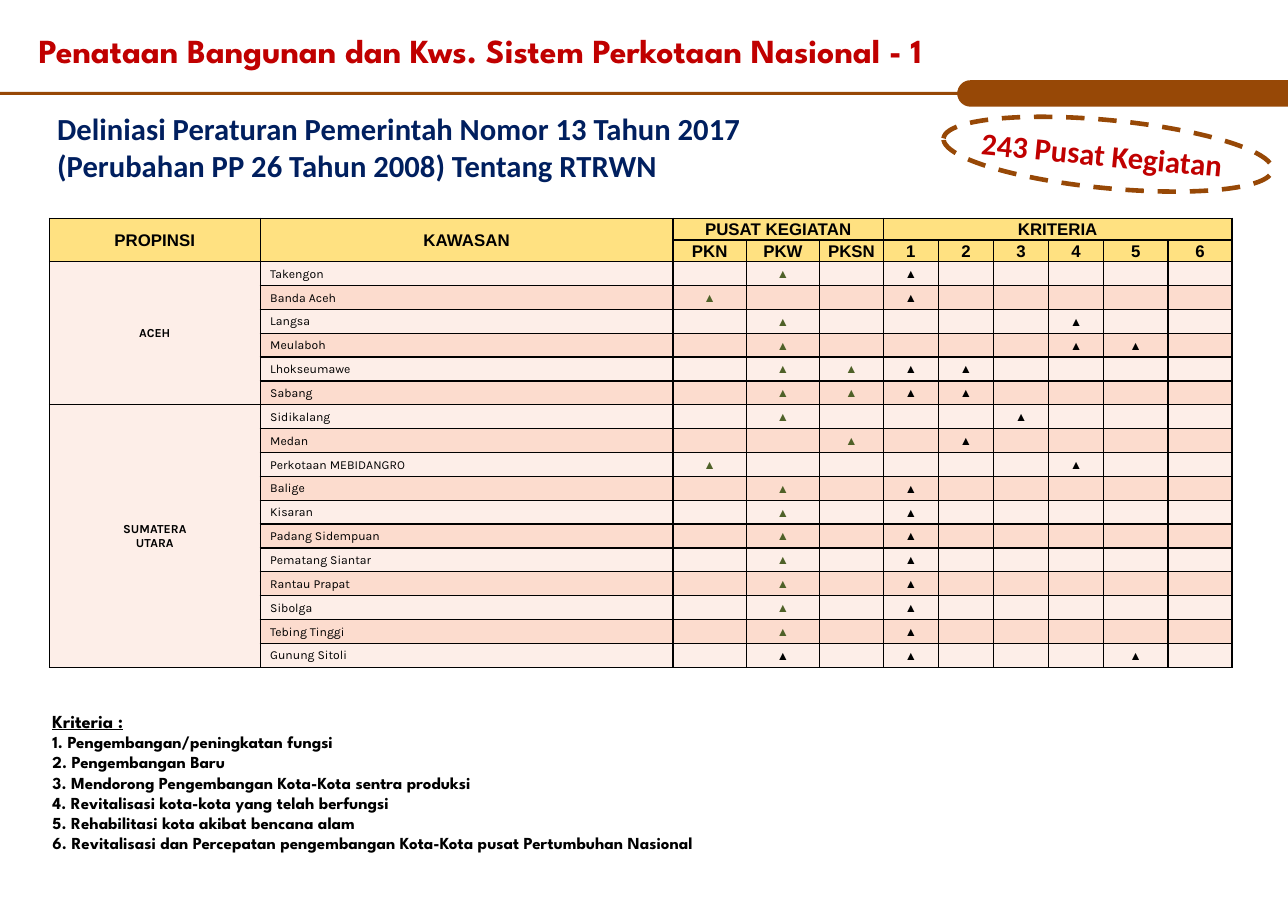
from math import cos, pi, sin

from lxml.etree import SubElement
from pptx import Presentation
from pptx.dml.color import RGBColor
from pptx.enum.dml import MSO_LINE
from pptx.enum.shapes import MSO_SHAPE
from pptx.enum.text import MSO_ANCHOR, MSO_AUTO_SIZE, PP_ALIGN
from pptx.oxml import parse_xml
from pptx.oxml.ns import nsdecls, qn
from pptx.util import Cm, Pt

COLORS = {
    "red": "C00000", "brown": "974806", "navy": "001F5F", "black": "000000",
    "green": "4F6128", "header": "FFE181", "light": "FDEEE8", "dark": "FCDCCE",
}
TITLE = {"name": "League Spartan", "size": Pt(22), "bold": True, "color": "red"}
SUBTITLE = {"name": "Calibri", "size": Pt(20), "bold": True, "color": "navy"}
BADGE = {**SUBTITLE, "color": "red"}
LIST_ITEM = {"name": "League Spartan", "size": Pt(11), "bold": True, "color": "black"}
LIST_HEAD = {**LIST_ITEM, "size": Pt(12), "underline": True}
HEADER = {"name": "Arial", "size": Pt(11), "bold": True, "color": "black"}
AREA = {"name": "Karla", "size": Pt(8), "bold": False, "color": "black"}
PROVINCE = {**AREA, "bold": True}
MARK = {**HEADER, "size": Pt(8)}
CENTER_MARK = {**MARK, "color": "green"}

CENTERS = ["PKN", "PKW", "PKSN"]
CRITERIA = ["1", "2", "3", "4", "5", "6"]
COLUMNS = ["PROPINSI", "KAWASAN"] + CENTERS + CRITERIA
WIDTHS = [4.86, 9.52, 1.69, 1.69, 1.47, 1.27, 1.27, 1.27, 1.27, 1.48, 1.48]
HEADER_HEIGHT, ROW_HEIGHT = 0.5, 0.55
PROVINCES = [
    (["ACEH"], [
        ("Takengon", "PKW 1"),
        ("Banda Aceh", "PKN 1"),
        ("Langsa", "PKW 4"),
        ("Meulaboh", "PKW 4 5"),
        ("Lhokseumawe", "PKW PKSN 1 2"),
        ("Sabang", "PKW PKSN 1 2"),
    ]),
    (["SUMATERA", "UTARA"], [
        ("Sidikalang", "PKW 3"),
        ("Medan", "PKSN 2"),
        ("Perkotaan MEBIDANGRO", "PKN 4"),
        ("Balige", "PKW 1"),
        ("Kisaran", "PKW 1"),
        ("Padang Sidempuan", "PKW 1"),
        ("Pematang Siantar", "PKW 1"),
        ("Rantau Prapat", "PKW 1"),
        ("Sibolga", "PKW 1"),
        ("Tebing Tinggi", "PKW 1"),
        ("Gunung Sitoli", "PKW 1 5"),
    ]),
]
BLACK_MARK_AREAS = {"Gunung Sitoli"}
CRITERIA_LIST = [
    "1. Pengembangan/peningkatan fungsi",
    "2. Pengembangan Baru",
    "3. Mendorong Pengembangan Kota-Kota sentra produksi",
    "4. Revitalisasi kota-kota yang telah berfungsi",
    "5. Rehabilitasi kota akibat bencana alam",
    "6. Revitalisasi dan Percepatan pengembangan Kota-Kota pusat Pertumbuhan Nasional",
]


def rgb(name):
    return RGBColor.from_string(COLORS[name])


def write(tf, lines, fmt, align=PP_ALIGN.LEFT):
    """Fill a text frame with one paragraph per line and return them."""
    for i, line in enumerate(lines):
        p = tf.add_paragraph() if i else tf.paragraphs[0]
        p.alignment = align
        p.space_before = Pt(0)
        r = p.add_run()
        r.text = line
        set_font(r, fmt)
    return tf.paragraphs


def set_font(r, fmt):
    for key, value in fmt.items():
        if key == "color":
            r.font.color.rgb = rgb(value)
        else:
            setattr(r.font, key, value)


def place(sp, left, top, width, height):
    sp.left, sp.top, sp.width, sp.height = map(Cm, (left, top, width, height))


def set_frame(tf, x=0.0, y=0.0):
    """Set the side and top margins and a fixed, wrapped, top-anchored frame."""
    tf.word_wrap = True
    tf.auto_size = MSO_AUTO_SIZE.NONE
    tf.vertical_anchor = MSO_ANCHOR.TOP
    tf.margin_left = tf.margin_right = Cm(x)
    tf.margin_top = tf.margin_bottom = Cm(y)


def add_text(slide, box, lines, fmt, align=PP_ALIGN.LEFT, rotation=0):
    sp = slide.shapes.add_textbox(*map(Cm, box))
    sp.rotation = rotation
    set_frame(sp.text_frame, 0.05, 0.08)
    write(sp.text_frame, lines, fmt, align)


def add_header_band(slide):
    """Draw the thin rule and the bar with a round left end."""
    right, middle, radius, center = 29.7, 2.155, 0.305, 22.38
    start = center - radius
    cap = [(center - radius * sin(a), middle - radius * cos(a))
           for a in (pi * i / 16 for i in range(17))]
    rule = [(0, 2.12), (start, 2.12), (start, 2.19), (0, 2.19)]
    bar = [(right, middle - radius), *cap, (right, middle + radius)]
    fb = slide.shapes.build_freeform(*map(Cm, rule[0]))
    fb.add_line_segments([(Cm(x), Cm(y)) for x, y in rule[1:]])
    fb.move_to(*map(Cm, bar[0]))
    fb.add_line_segments([(Cm(x), Cm(y)) for x, y in bar[1:]])
    sp = fb.convert_to_shape()
    sp.shadow.inherit = False
    sp.fill.solid()
    sp.fill.fore_color.rgb = rgb("brown")
    sp.line.fill.background()


def add_dashed_ellipse(slide, box, rotation):
    sp = slide.shapes.add_shape(MSO_SHAPE.OVAL, *map(Cm, box))
    sp.rotation = rotation
    sp.shadow.inherit = False
    sp.fill.background()
    sp.line.color.rgb = rgb("brown")
    sp.line.width = Pt(3)
    sp.line.dash_style = MSO_LINE.DASH


def format_cell(cell, fill):
    """Give a cell its fill, margins, black borders and small empty line."""
    cell.fill.solid()
    cell.fill.fore_color.rgb = rgb(fill)
    cell.vertical_anchor = MSO_ANCHOR.MIDDLE
    cell.margin_left = cell.margin_right = cell.margin_top = Cm(0.03)
    cell.margin_bottom = 0
    tc_pr = cell._tc.get_or_add_tcPr()
    for i, side in enumerate(("lnL", "lnR", "lnT", "lnB")):
        tc_pr.insert(i, parse_xml(
            f'<a:{side} {nsdecls("a")} w="12700"><a:solidFill>'
            f'<a:srgbClr val="{COLORS["black"]}"/></a:solidFill></a:{side}>'))
    SubElement(cell.text_frame.paragraphs[0]._p, qn("a:endParaRPr"), sz="800")


def add_area_row(table, row, area, marks):
    cell = table.cell(row, 1)
    write(cell.text_frame, [area], AREA)
    cell.margin_left = Cm(0.23)
    for mark in marks.split():
        green = mark in CENTERS and area not in BLACK_MARK_AREAS
        write(table.cell(row, COLUMNS.index(mark)).text_frame, ["▲"],
              CENTER_MARK if green else MARK, PP_ALIGN.CENTER)


def add_area_table(slide, left, top):
    heights = [HEADER_HEIGHT] * 2 + [ROW_HEIGHT] * sum(len(a) for _, a in PROVINCES)
    table = slide.shapes.add_table(
        len(heights), len(WIDTHS), Cm(left), Cm(top),
        Cm(sum(WIDTHS)), Cm(sum(heights))).table
    for column, width in zip(table.columns, WIDTHS):
        column.width = Cm(width)
    for i, height in enumerate(heights):
        table.rows[i].height = Cm(height)
        for j in range(len(WIDTHS)):
            striped = i % 2 and j
            format_cell(table.cell(i, j),
                        "header" if i < 2 else "dark" if striped else "light")

    groups = [(0, 2, "PUSAT KEGIATAN", CENTERS), (0, 5, "KRITERIA", CRITERIA)]
    for row, col, text, members in groups:
        table.cell(row, col).merge(table.cell(row, col + len(members) - 1))
        write(table.cell(row, col).text_frame, [text], HEADER, PP_ALIGN.CENTER)
    for col, text in enumerate(COLUMNS):
        if col < 2:
            table.cell(0, col).merge(table.cell(1, col))
        write(table.cell(int(col > 1), col).text_frame, [text], HEADER, PP_ALIGN.CENTER)

    row = 2
    for province, areas in PROVINCES:
        table.cell(row, 0).merge(table.cell(row + len(areas) - 1, 0))
        write(table.cell(row, 0).text_frame, province, PROVINCE, PP_ALIGN.CENTER)
        for area, marks in areas:
            add_area_row(table, row, area, marks)
            row += 1


def main():
    prs = Presentation()
    prs.slide_width, prs.slide_height = Cm(29.7), Cm(21)
    slide = prs.slides.add_slide(prs.slide_layouts[1])
    title, body = slide.placeholders

    place(title, 0.86, 0.66, 28.58, 0.97)
    set_frame(title.text_frame, 0.03, 0.03)
    write(title.text_frame,
          ["Penataan Bangunan dan Kws. Sistem Perkotaan Nasional - 1"], TITLE)
    add_header_band(slide)
    add_text(slide, (1.27, 2.46, 16.54, 1.78),
             ["Deliniasi Peraturan Pemerintah Nomor 13 Tahun 2017",
              "(Perubahan PP 26 Tahun 2008) Tentang RTRWN"], SUBTITLE)
    add_area_table(slide, 1.14, 5.03)

    place(body, 0.96, 16.23, 27.66, 3.58)
    set_frame(body.text_frame, 0.25, 0.13)
    items = write(body.text_frame, ["Kriteria :", *CRITERIA_LIST], LIST_ITEM)
    set_font(items[0].runs[0], LIST_HEAD)
    for p in items:
        p_pr = p._p.get_or_add_pPr()
        p_pr.set("marL", "0")
        p_pr.set("indent", "0")
        SubElement(p_pr, qn("a:buNone"))

    add_dashed_ellipse(slide, (21.74, 2.77, 7.62, 1.57), 5.5)
    add_text(slide, (22.1, 3.05, 6.63, 0.91), ["243 Pusat Kegiatan"], BADGE,
             PP_ALIGN.CENTER, 5.5)
    prs.save("out.pptx")


if __name__ == "__main__":
    main()
